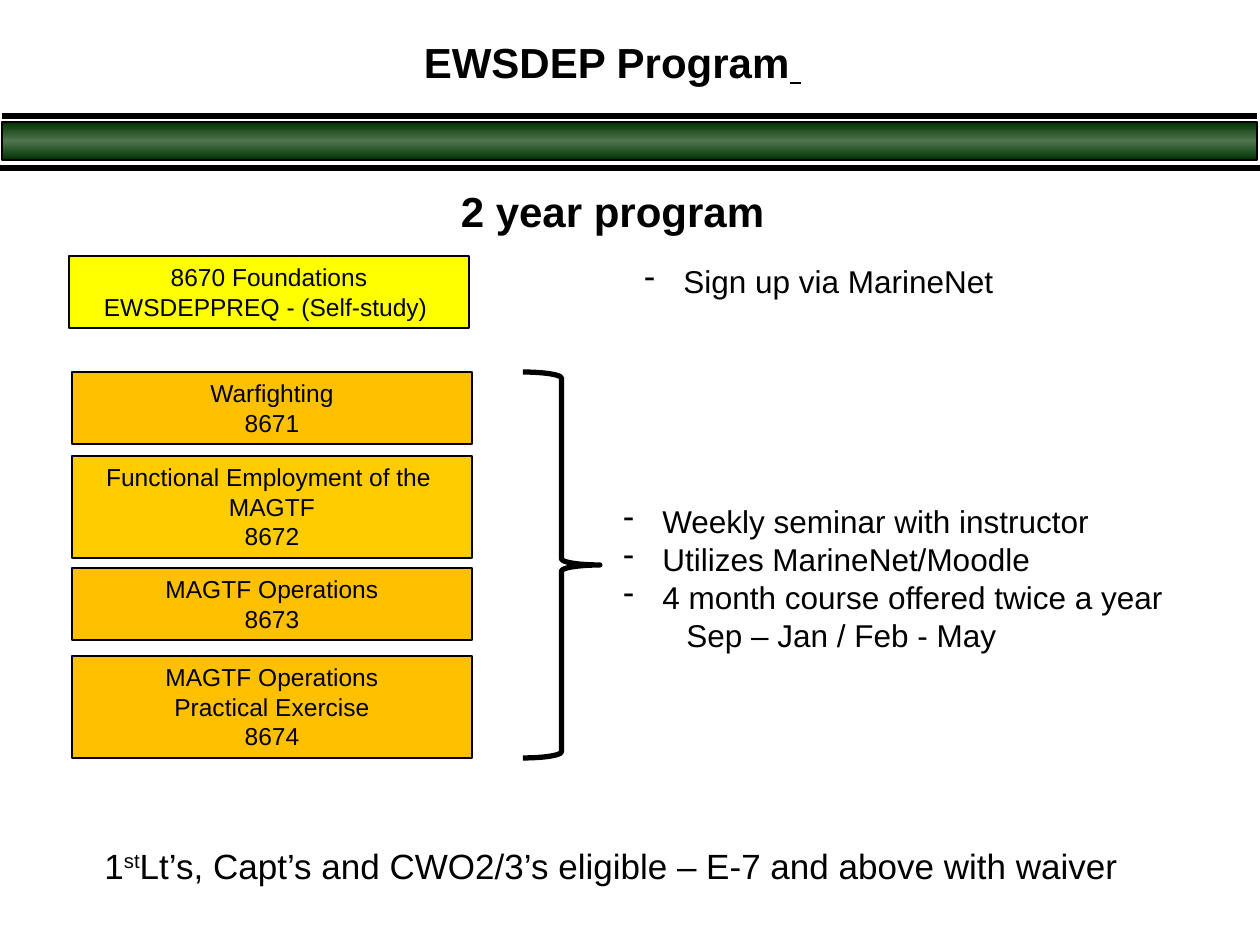
from dataclasses import dataclass

from lxml import etree
from pptx import Presentation
from pptx.dml.color import RGBColor
from pptx.enum.shapes import MSO_CONNECTOR as Connector, MSO_SHAPE as Preset
from pptx.enum.text import MSO_ANCHOR as Anchor, PP_ALIGN as Align
from pptx.oxml.ns import qn
from pptx.util import Emu, Pt

EMU_PER_PX = 914400 / 126
COLORS = {
    "ink": "000000",
    "band edge": "003300",
    "band middle": "50754F",
    "prerequisite": "FFFF00",
    "course": "FFC000",
    "employment": "FFCC00",
}
HEADING = {"size": Pt(24), "bold": True}
COURSE = {"size": Pt(14)}
DETAIL = {"size": Pt(18)}
FOOTNOTE = {"size": Pt(20)}
COURSE_WIDTH = 400
BULLET_INDENT = 39


def px(length: int) -> Emu:
    return Emu(round(length * EMU_PER_PX))


def rgb(name: str) -> RGBColor:
    return RGBColor.from_string(COLORS[name])


@dataclass(frozen=True)
class Area:
    left: int
    top: int
    width: int
    height: int

    def emu(self) -> list[Emu]:
        return [px(v) for v in (self.left, self.top, self.width, self.height)]


@dataclass(frozen=True)
class Course:
    left: int
    top: int
    height: int
    color: str
    lines: tuple[str, ...]


COURSES = (
    Course(72, 372, 72, "course", ("Warfighting", "8671")),
    Course(72, 456, 102, "employment", ("Functional Employment of the ", "MAGTF", "8672")),
    Course(72, 568, 72, "course", ("MAGTF Operations", "8673")),
    Course(72, 656, 102, "course", ("MAGTF Operations", "Practical Exercise", "8674")),
    Course(69, 256, 72, "prerequisite", ("8670 Foundations", "EWSDEPPREQ - (Self-study) ")),
)


def add_run(paragraph, text: str, style: dict):
    run = paragraph.add_run()
    run.text = text
    for attribute, value in {"name": "Arial", **style}.items():
        setattr(run.font, attribute, value)
    run.font.color.rgb = rgb("ink")
    return run


def write_lines(frame, lines: tuple[str, ...], style: dict, align=Align.LEFT) -> list:
    frame.word_wrap = True
    paragraphs = []
    for number, line in enumerate(lines):
        paragraph = frame.add_paragraph() if number else frame.paragraphs[0]
        paragraph.alignment = align
        add_run(paragraph, line, style)
        paragraphs.append(paragraph)
    return paragraphs


def add_text(slide, area: Area, lines: tuple[str, ...], style: dict, align=Align.LEFT):
    frame = slide.shapes.add_textbox(*area.emu()).text_frame
    return frame, write_lines(frame, lines, style, align)


def indent(paragraph, margin: int, hanging: int = 0, bullet: str = "") -> None:
    properties = paragraph._p.get_or_add_pPr()
    properties.set("marL", str(px(margin)))
    properties.set("indent", str(-px(hanging)))
    if bullet:
        etree.SubElement(properties, qn("a:buChar")).set("char", bullet)


def add_outlined(slide, preset, area: Area, weight: float):
    shape = slide.shapes.add_shape(preset, *area.emu())
    shape.shadow.inherit = False
    shape.line.color.rgb = rgb("ink")
    shape.line.width = Pt(weight)
    return shape


def add_rule(slide, left: int, right: int, y: int) -> None:
    rule = slide.shapes.add_connector(Connector.STRAIGHT, px(left), px(y), px(right), px(y))
    rule.line.color.rgb = rgb("ink")
    rule.line.width = Pt(3)
    etree.SubElement(rule._element.spPr, qn("a:effectLst"))


def add_band(slide) -> None:
    """Draw the green bar, dark at both edges and lighter along its middle."""
    band = add_outlined(slide, Preset.RECTANGLE, Area(2, 122, 1255, 38), 0.75)
    band.fill.gradient()
    band.fill.gradient_angle = 90
    stops = band.fill._fill._gradFill.find(qn("a:gsLst"))
    for stop in list(stops):
        stops.remove(stop)
    for percent, color in ((0, "band edge"), (50, "band middle"), (100, "band edge")):
        stop = etree.SubElement(stops, qn("a:gs"), pos=str(percent * 1000))
        etree.SubElement(stop, qn("a:srgbClr"), val=COLORS[color])


def add_course(slide, course: Course) -> None:
    area = Area(course.left, course.top, COURSE_WIDTH, course.height)
    box = add_outlined(slide, Preset.RECTANGLE, area, 0.75)
    box.fill.solid()
    box.fill.fore_color.rgb = rgb(course.color)
    box.text_frame.vertical_anchor = Anchor.TOP
    write_lines(box.text_frame, course.lines, COURSE, Align.CENTER)


def add_details(slide, area: Area, lines: tuple[str, ...]) -> list:
    _, paragraphs = add_text(slide, area, lines, DETAIL)
    for paragraph in paragraphs:
        indent(paragraph, BULLET_INDENT, BULLET_INDENT, "-")
    return paragraphs


def main() -> None:
    deck = Presentation()
    deck.slide_width, deck.slide_height = px(1260), px(945)
    slide = deck.slides.add_slide(deck.slide_layouts[6])

    add_rule(slide, 2, 1257, 116)
    add_band(slide)
    add_rule(slide, 0, 1260, 168)

    title, (heading,) = add_text(
        slide, Area(232, -18, 761, 111), ("EWSDEP Program",), HEADING, Align.CENTER)
    title.vertical_anchor = Anchor.BOTTOM
    add_run(heading, " ", {**HEADING, "underline": True})
    duration, _ = add_text(
        slide, Area(446, 179, 333, 63), ("2 year program",), HEADING, Align.CENTER)
    duration.word_wrap = False

    for course in COURSES:
        add_course(slide, course)

    brace = add_outlined(slide, Preset.RIGHT_BRACE, Area(523, 372, 77, 386), 3)
    brace.fill.background()
    brace.adjustments[0], brace.adjustments[1] = 0.08, 0.5

    seminar = add_details(slide, Area(611, 496, 616, 165), (
        "Weekly seminar with instructor",
        "Utilizes MarineNet/Moodle",
        "4 month course offered twice a year",
    ))
    terms = seminar[0]._parent.add_paragraph()
    terms.level = 1
    indent(terms, 63)
    add_run(terms, "Sep – Jan / Feb - May", DETAIL)
    add_details(slide, Area(632, 256, 616, 50), ("Sign up via MarineNet",))

    _, (eligibility,) = add_text(slide, Area(92, 838, 1076, 55), ("1",), FOOTNOTE)
    ordinal = add_run(eligibility, "st", FOOTNOTE)
    ordinal.font._element.set("baseline", "30000")
    add_run(eligibility, "Lt’s, Capt’s and CWO2/3’s eligible – E-7 and above with waiver", FOOTNOTE)

    deck.save("out.pptx")


if __name__ == "__main__":
    main()
